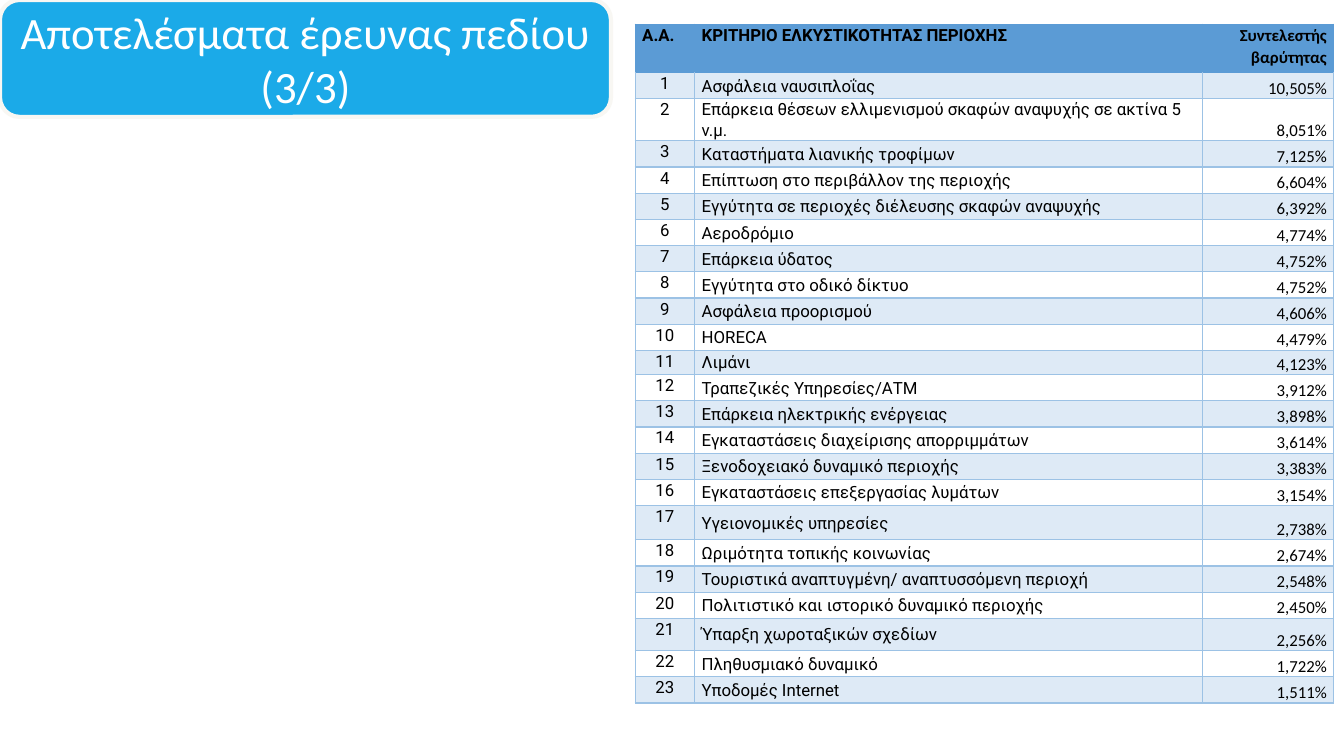
"""Slide with the weighted criteria of area attractiveness."""
from dataclasses import dataclass

from lxml.etree import SubElement
from pptx import Presentation
from pptx.dml.color import RGBColor
from pptx.enum.shapes import MSO_SHAPE
from pptx.enum.text import MSO_ANCHOR as ANCHOR, PP_ALIGN as ALIGN
from pptx.oxml.ns import qn
from pptx.util import Inches, Pt


@dataclass(frozen=True)
class Theme:
    title_fill: str = "1BAAE8"
    title_line: str = "F8F7F3"
    title_text: str = "FFFFFF"
    header: str = "5B9BD5"
    band: str = "DEEAF6"
    grid: str = "9CC2E5"
    text: str = "000000"
    title_size: int = 32
    table_size: int = 12
    font: str = "Calibri"
    label_font: str = "Roboto"


THEME = Theme()
TITLE = "Αποτελέσματα έρευνας πεδίου (3/3)"
HEADER = ("Α.Α.", "ΚΡΙΤΗΡΙΟ ΕΛΚΥΣΤΙΚΟΤΗΤΑΣ ΠΕΡΙΟΧΗΣ", "Συντελεστής βαρύτητας")
CRITERIA = [
    ("Ασφάλεια ναυσιπλοΐας", "10,505%"),
    ("Επάρκεια θέσεων ελλιμενισμού σκαφών αναψυχής σε ακτίνα 5 ν.μ.", "8,051%"),
    ("Καταστήματα λιανικής τροφίμων", "7,125%"),
    ("Επίπτωση στο περιβάλλον της περιοχής", "6,604%"),
    ("Εγγύτητα σε περιοχές διέλευσης σκαφών αναψυχής", "6,392%"),
    ("Αεροδρόμιο", "4,774%"),
    ("Επάρκεια ύδατος", "4,752%"),
    ("Εγγύτητα στο οδικό δίκτυο", "4,752%"),
    ("Ασφάλεια προορισμού", "4,606%"),
    ("HORECA", "4,479%"),
    ("Λιμάνι", "4,123%"),
    ("Τραπεζικές Υπηρεσίες/ΑΤΜ", "3,912%"),
    ("Επάρκεια ηλεκτρικής ενέργειας", "3,898%"),
    ("Εγκαταστάσεις διαχείρισης απορριμμάτων", "3,614%"),
    ("Ξενοδοχειακό δυναμικό περιοχής", "3,383%"),
    ("Εγκαταστάσεις επεξεργασίας λυμάτων", "3,154%"),
    ("Υγειονομικές υπηρεσίες", "2,738%"),
    ("Ωριμότητα τοπικής κοινωνίας", "2,674%"),
    ("Τουριστικά αναπτυγμένη/ αναπτυσσόμενη περιοχή", "2,548%"),
    ("Πολιτιστικό και ιστορικό δυναμικό περιοχής", "2,450%"),
    ("Ύπαρξη χωροταξικών σχεδίων", "2,256%"),
    ("Πληθυσμιακό δυναμικό", "1,722%"),
    ("Υποδομές Internet", "1,511%"),
]
COLUMN_WIDTHS = (0.59, 5.04, 1.3)
ROW_HEIGHT = 0.26
SPECIAL_HEIGHTS = {0: 0.48, 2: 0.29, 11: 0.24, 17: 0.34, 21: 0.32}
FIRST_JUSTIFIED = 12


def write(tf, text, *, size, color, font, bold=False, align=ALIGN.LEFT,
          spacing=None, after=None):
    tf.word_wrap = True
    p = tf.paragraphs[0]
    p.alignment, p.line_spacing = align, spacing
    if after is not None:
        p.space_after = Pt(after)
    r = p.add_run()
    r.text = text
    r.font.size, r.font.bold, r.font.name = Pt(size), bold, font
    r.font.color.rgb = RGBColor.from_string(color)


def set_borders(cell, **colors):
    tc_pr = cell._tc.get_or_add_tcPr()
    for side in ("L", "R", "T", "B"):
        ln = SubElement(tc_pr, qn(f"a:ln{side}"), w=str(Pt(1)))
        SubElement(SubElement(ln, qn("a:solidFill")), qn("a:srgbClr"), val=colors[side])


def fill_cell(cell, text, *, fill, line, top, anchor, **text_format):
    cell.margin_left = cell.margin_right = Inches(0.07)
    cell.margin_top = cell.margin_bottom = Inches(0)
    cell.vertical_anchor = anchor
    set_borders(cell, L=line, R=line, T=top, B=line)
    if fill:
        cell.fill.solid()
        cell.fill.fore_color.rgb = RGBColor.from_string(fill)
    else:
        cell.fill.background()
    write(cell.text_frame, text, size=THEME.table_size, color=THEME.text,
          spacing=1.07, after=8, **text_format)


def add_criteria_table(s):
    rows = [HEADER] + [(str(n), *row) for n, row in enumerate(CRITERIA, 1)]
    heights = [SPECIAL_HEIGHTS.get(i, ROW_HEIGHT) for i in range(len(rows))]
    table = s.shapes.add_table(len(rows), len(HEADER), Inches(6.3), Inches(0.24),
                               Inches(sum(COLUMN_WIDTHS)), Inches(sum(heights))).table
    table.first_row = table.horz_banding = False
    for column, width in zip(table.columns, COLUMN_WIDTHS):
        column.width = Inches(width)
    fonts = (THEME.label_font, THEME.label_font, THEME.font)
    for i, row in enumerate(rows):
        table.rows[i].height = Inches(heights[i])
        head = i == 0
        fill = THEME.header if head else THEME.band if i % 2 else None
        line = THEME.header if head else THEME.grid
        top = THEME.header if i < 2 else THEME.grid
        name_align = ALIGN.JUSTIFY if i >= FIRST_JUSTIFIED else ALIGN.LEFT
        aligns = (ALIGN.LEFT if head else ALIGN.CENTER, name_align, ALIGN.RIGHT)
        anchors = (ANCHOR.TOP,) * 3 if head else (ANCHOR.TOP, ANCHOR.MIDDLE, ANCHOR.BOTTOM)
        for j, text in enumerate(row):
            fill_cell(table.cell(i, j), text, fill=fill, line=line, top=top,
                      anchor=anchors[j], align=aligns[j], font=fonts[j], bold=head)


def add_title(s):
    box = s.shapes.add_shape(MSO_SHAPE.ROUNDED_RECTANGLE, Inches(0), Inches(0),
                             Inches(6.06), Inches(1.16))
    box.shadow.inherit = False
    box.fill.solid()
    box.fill.fore_color.rgb = RGBColor.from_string(THEME.title_fill)
    box.line.color.rgb = RGBColor.from_string(THEME.title_line)
    box.line.width = Pt(3)
    box.text_frame.vertical_anchor = ANCHOR.MIDDLE
    write(box.text_frame, TITLE, size=THEME.title_size, color=THEME.title_text,
          font=THEME.font, align=ALIGN.CENTER)


def main():
    prs = Presentation()
    prs.slide_width, prs.slide_height = Inches(13.33), Inches(7.5)
    s = prs.slides.add_slide(prs.slide_layouts[6])
    add_criteria_table(s)
    add_title(s)
    prs.save("out.pptx")


if __name__ == "__main__":
    main()
